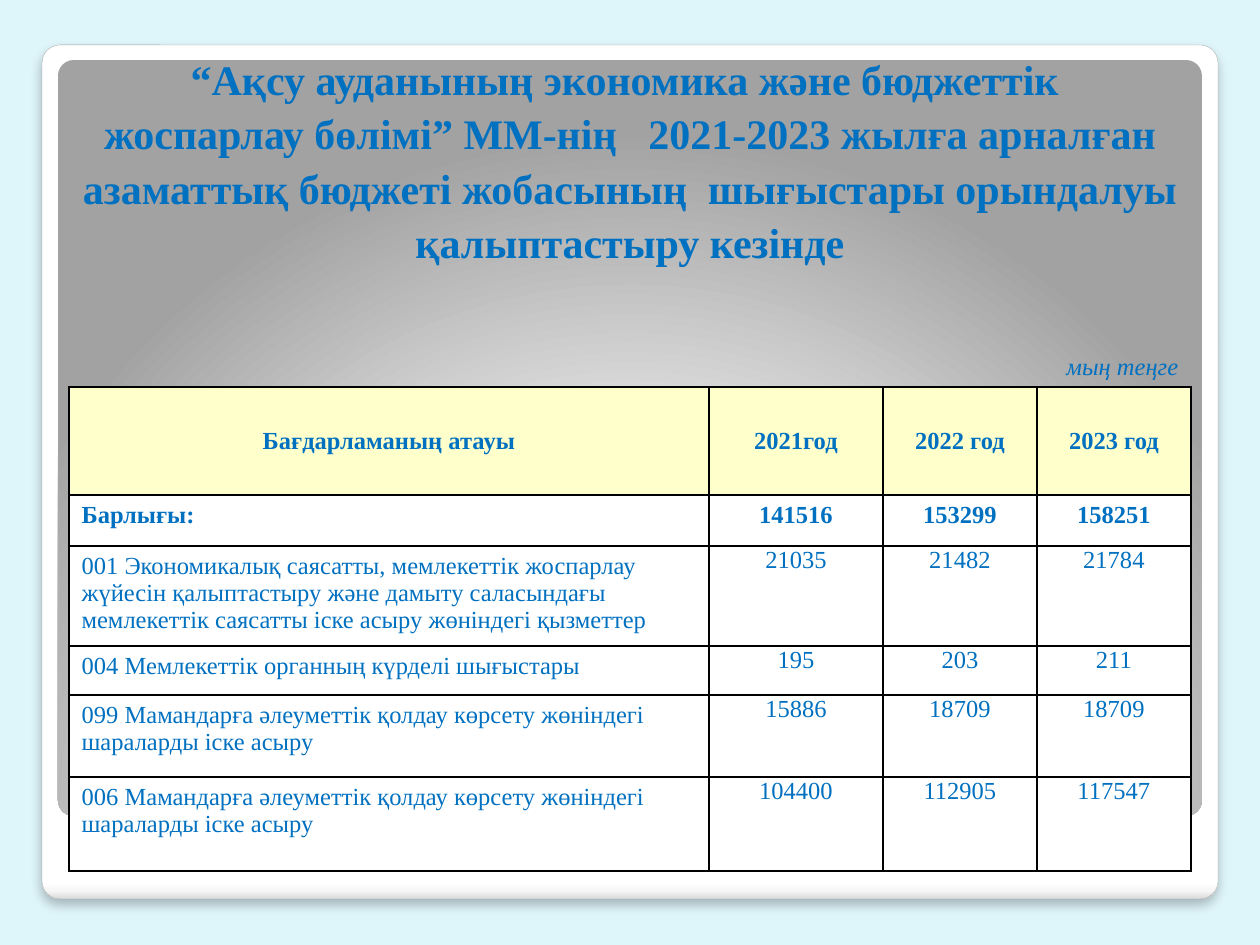
from dataclasses import dataclass
from lxml.etree import SubElement as sub
from pptx import Presentation
from pptx.dml.color import RGBColor as RGB
from pptx.enum.shapes import MSO_SHAPE as Kind
from pptx.enum.text import MSO_ANCHOR as Anchor, PP_ALIGN as Align
from pptx.oxml import parse_xml
from pptx.oxml.ns import nsdecls, qn
from pptx.util import Emu, Pt


@dataclass(frozen=True)
class Theme:
    font: str = "Times New Roman"
    back: str = "DEF5FA"
    ink: str = "0070C0"
    head: str = "FFFFCC"
    body: str = "FFFFFF"
    rule: str = "000000"
    edge: str = "A4A4A4"
    title: int = 24
    cell: int = 14


T = Theme()
CARD = [(0, "FFFFFF"), (98, "FFFFFF"), (99, "F7F7F7"), (100, "DADADA")]
PANEL = [(0, "FFFFFF"), (55, "E1E1E1"), (100, "A2A2A2")]
DOWN = '<a:lin ang="5400000" scaled="0"/>'
GLOW = ('<a:path path="circle"><a:fillToRect l="50000" t="175000" '
        'r="50000" b="-75000"/></a:path>')
TITLE = ("“Ақсу ауданының экономика және бюджеттік \v"
         "жоспарлау бөлімі” ММ-нің   2021-2023 жылға арналған "
         "азаматтық бюджеті жобасының  шығыстары орындалуы "
         "қалыптастыру кезінде")
COLS = [640, 174, 154, 154]
ROWS = [82, 108, 51, 100, 49, 82, 94]
DATA = [
    ["", "", "мың теңге", ""],
    ["Бағдарламаның атауы", "2021год", "2022 год", "2023 год"],
    ["Барлығы:", "141516", "153299", "158251"],
    ["001 Экономикалық саясатты, мемлекеттік жоспарлау жүйесін "
     "қалыптастыру және дамыту саласындағы мемлекеттік саясатты "
     "іске асыру жөніндегі қызметтер", "21035", "21482", "21784"],
    ["004 Мемлекеттік органның күрделі шығыстары", "195", "203", "211"],
    ["099 Мамандарға әлеуметтік қолдау көрсету жөніндегі "
     "шараларды іске асыру", "15886", "18709", "18709"],
    ["006 Мамандарға әлеуметтік қолдау көрсету жөніндегі "
     "шараларды іске асыру", "104400", "112905", "117547"],
]


def px(n):
    return Emu(round(n * 914400 / 126))


def style(para, size, align, bold=False, slant=False):
    para.alignment = align
    for run in para.runs:
        font = run.font
        font.name, font.size = T.font, Pt(size)
        font.bold, font.italic = bold, slant
        font.color.rgb = RGB.from_string(T.ink)


def add_card(slide, box, stops, shade):
    card = slide.shapes.add_shape(Kind.ROUNDED_RECTANGLE, *map(px, box))
    card.adjustments[0] = 0.021
    card.shadow.inherit = False
    card.line.fill.background()
    marks = "".join(f'<a:gs pos="{pos * 1000}"><a:srgbClr val="{tone}"/></a:gs>'
                    for pos, tone in stops)
    fill = parse_xml(f'<a:gradFill {nsdecls("a")} rotWithShape="1">'
                     f'<a:gsLst>{marks}</a:gsLst>{shade}</a:gradFill>')
    card._element.spPr.find(qn("a:prstGeom")).addnext(fill)
    return card


def add_shade(card):
    card.line.color.rgb = RGB.from_string(T.edge)
    card.line.width = Pt(0.16)
    effects = card._element.spPr.find(qn("a:effectLst"))
    drop = sub(effects, qn("a:outerShdw"), blurRad=str(Pt(6)),
               dist=str(Pt(4)), dir="5400000", rotWithShape="0")
    tone = sub(drop, qn("a:srgbClr"), val="000000")
    sub(tone, qn("a:alpha"), val="25000")


def add_title(slide):
    box = slide.shapes.add_textbox(*map(px, (59, 55, 1142, 218)))
    frame = box.text_frame
    frame.word_wrap = True
    frame.vertical_anchor = Anchor.BOTTOM
    para = frame.paragraphs[0]
    para.text = TITLE
    para.line_spacing = 1.08
    style(para, T.title, Align.CENTER, bold=True)


def add_rules(cell, sides):
    props = cell._tc.get_or_add_tcPr()
    for spot, side in enumerate("LRTB"):
        shown = side in sides
        paint = f'<a:solidFill><a:srgbClr val="{T.rule}"/></a:solidFill>'
        props.insert(spot, parse_xml(
            f'<a:ln{side} {nsdecls("a")} w="{Pt(1)}">'
            f'{paint if shown else "<a:noFill/>"}</a:ln{side}>'))


def fill_cell(cell, row, col, text):
    cell.text = text
    para = cell.text_frame.paragraphs[0]
    if row == 0:
        cell.vertical_anchor = Anchor.BOTTOM
        cell.fill.background()
        style(para, T.cell, Align.RIGHT, slant=True)
        add_rules(cell, "B")
        return
    if row == 1:
        cell.vertical_anchor = Anchor.MIDDLE
    if row > 2 and col:
        cell.margin_left = cell.margin_right = cell.margin_top = px(1)
        cell.margin_bottom = 0
    cell.fill.solid()
    cell.fill.fore_color.rgb = RGB.from_string(T.head if row == 1 else T.body)
    align = Align.CENTER if col or row == 1 else Align.LEFT
    style(para, T.cell, align, bold=row < 3)
    add_rules(cell, "LRTB")


def add_grid(slide):
    size = (69, 305, sum(COLS), sum(ROWS))
    grid = slide.shapes.add_table(len(ROWS), len(COLS), *map(px, size)).table
    grid.first_row = grid.horz_banding = False
    for col, wide in zip(grid.columns, COLS):
        col.width = px(wide)
    for row, high in zip(grid.rows, ROWS):
        row.height = px(high)
    for row, line in enumerate(DATA):
        for col, text in enumerate(line):
            fill_cell(grid.cell(row, col), row, col, text)
    grid.cell(0, 2).merge(grid.cell(0, 3))


def main():
    deck = Presentation()
    deck.slide_width, deck.slide_height = px(1260), px(945)
    slide = deck.slides.add_slide(deck.slide_layouts[6])
    slide.background.fill.solid()
    slide.background.fill.fore_color.rgb = RGB.from_string(T.back)
    add_shade(add_card(slide, (42, 45, 1176, 854), CARD, DOWN))
    add_card(slide, (58, 60, 1144, 756), PANEL, GLOW)
    add_grid(slide)
    add_title(slide)
    deck.save("out.pptx")


if __name__ == "__main__":
    main()
